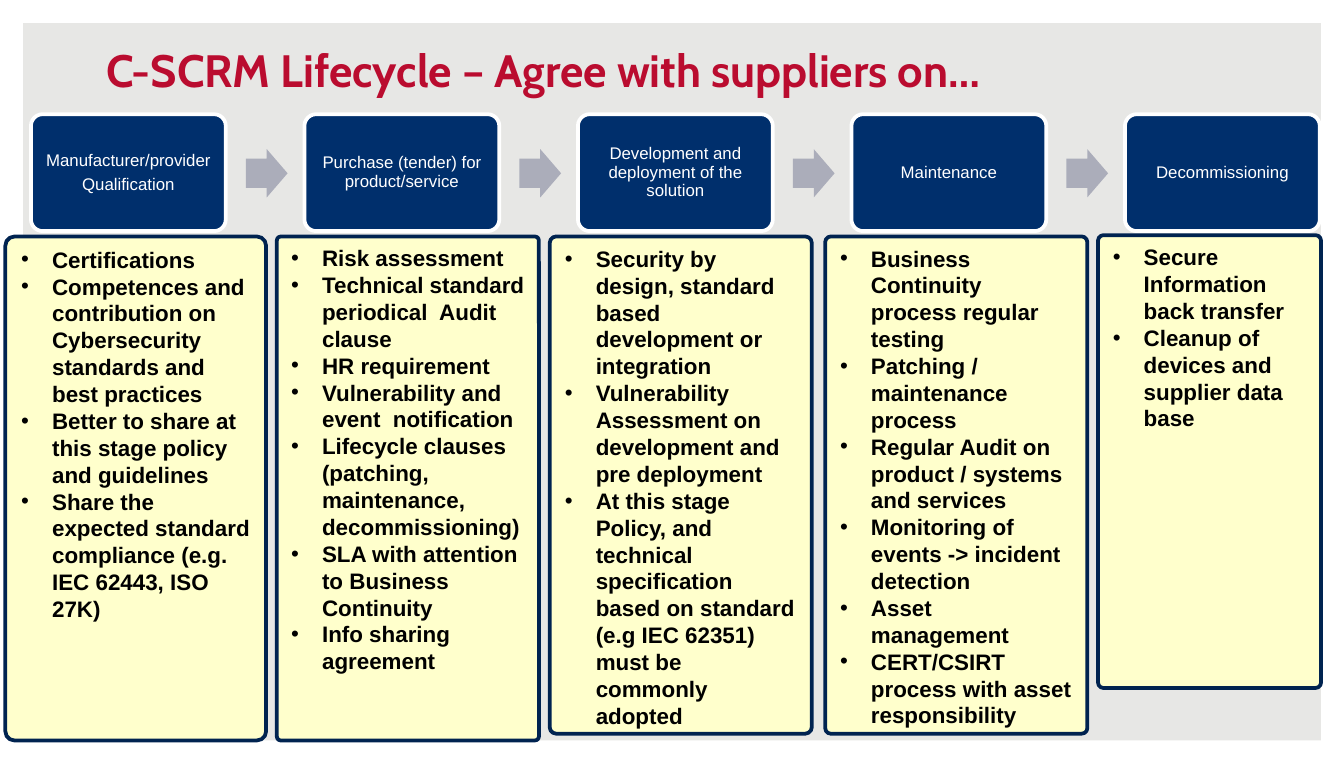
from pptx import Presentation
from pptx.dml.color import RGBColor
from pptx.enum.shapes import MSO_SHAPE
from pptx.enum.text import MSO_ANCHOR, MSO_AUTO_SIZE, PP_ALIGN
from pptx.oxml import parse_xml
from pptx.oxml.ns import nsdecls
from pptx.util import Inches, Pt

FRAME, ROUNDED, ARROW = MSO_SHAPE.FRAME, MSO_SHAPE.ROUNDED_RECTANGLE, MSO_SHAPE.RIGHT_ARROW
TOP, MIDDLE, BOTTOM = MSO_ANCHOR.TOP, MSO_ANCHOR.MIDDLE, MSO_ANCHOR.BOTTOM
LEFT, CENTER = PP_ALIGN.LEFT, PP_ALIGN.CENTER

THEME = {
    "title_font": "Cabin", "body_font": "Arial",
    "title_size": 24.3, "stage_size": 9, "card_size": 12,
    "back": "E7E7E5", "white": "FFFFFF", "title": "BA0C2F", "stage": "002F6C",
    "arrow": "ABADBA", "card": "FFFFCC", "card_line": "002350", "text": "000000",
}

TITLE = "C-SCRM Lifecycle – Agree with suppliers on…"
STAGES = [
    {"name": ["Manufacturer/provider", "Qualification"],
     "card": (0.04, 1.76, 1.94, 3.75), "round": 0.035,
     "points": ["Certifications",
                "Competences and contribution on Cybersecurity standards and best practices",
                "Better to share at this stage policy and guidelines",
                "Share the expected standard compliance (e.g. IEC 62443, ISO 27K)"]},
    {"name": ["Purchase (tender) for product/service"],
     "card": (2.06, 1.76, 1.95, 3.75), "round": 0.015,
     "points": ["Risk assessment",
                "Technical standard periodical  Audit clause",
                "HR requirement",
                "Vulnerability and event  notification",
                "Lifecycle clauses (patching, maintenance, decommissioning)",
                "SLA with attention to Business Continuity",
                "Info sharing agreement"]},
    {"name": ["Development and deployment of the solution"],
     "card": (4.09, 1.76, 1.95, 3.7), "round": 0.025,
     "points": ["Security by design, standard based  development or integration",
                "Vulnerability Assessment on development and pre deployment",
                "At this stage Policy, and technical specification based on standard "
                "(e.g IEC 62351) must be commonly adopted"]},
    {"name": ["Maintenance"],
     "card": (6.14, 1.76, 1.95, 3.7), "round": 0.021,
     "points": ["Business Continuity process regular testing",
                "Patching / maintenance process",
                "Regular Audit on product / systems and services",
                "Monitoring of events -> incident detection",
                "Asset management",
                "CERT/CSIRT process with asset responsibility"]},
    {"name": ["Decommissioning"],
     "card": (8.17, 1.75, 1.66, 3.37), "round": 0.025,
     "points": ["Secure Information back transfer",
                "Cleanup of devices and supplier data base"]},
]
STAGE_LEFT, STAGE_TOP, STAGE_W, STAGE_H = 0.23, 0.85, 1.45, 0.87
STAGE_STEP = 2.035
ARROW_OFFSET, ARROW_TOP, ARROW_W, ARROW_H = 1.6, 1.11, 0.31, 0.36
BULLET_INDENT = 0.23


def color(name):
    return RGBColor.from_string(THEME[name])


def add_block(s, kind, box, fill, adjust, line=None):
    sp = s.shapes.add_shape(kind, *[Inches(v) for v in box])
    sp.shadow.inherit = False
    sp.fill.solid()
    sp.fill.fore_color.rgb = color(fill)
    for i, value in enumerate(adjust):
        sp.adjustments[i] = value
    if line:
        sp.line.color.rgb = color(line)
        sp.line.width = Pt(2)
    else:
        sp.line.fill.background()
    return sp


def set_frame(tf, anchor, inset_x, inset_y):
    tf.word_wrap = True
    tf.auto_size = MSO_AUTO_SIZE.NONE
    tf.vertical_anchor = anchor
    tf.margin_left = tf.margin_right = Inches(inset_x)
    tf.margin_top = tf.margin_bottom = Inches(inset_y)


def write(tf, lines, align, font, size, ink, bold=False):
    for i, line in enumerate(lines):
        p = tf.paragraphs[0] if i == 0 else tf.add_paragraph()
        p.alignment = align
        r = p.add_run()
        r.text = line
        r.font.name = THEME[font]
        r.font.size = Pt(THEME[size])
        r.font.color.rgb = color(ink)
        r.font.bold = bold


def add_bullet(p):
    pPr = p._p.get_or_add_pPr()
    pPr.set("marL", str(Inches(BULLET_INDENT)))
    pPr.set("indent", str(-Inches(BULLET_INDENT)))
    for xml in (f'<a:buClr {nsdecls("a")}><a:srgbClr val="{THEME["text"]}"/></a:buClr>',
                f'<a:buFont {nsdecls("a")} typeface="Arial"/>',
                f'<a:buChar {nsdecls("a")} char="•"/>'):
        pPr.append(parse_xml(xml))


def add_title(s):
    sp = s.shapes.title
    sp.left, sp.top, sp.width, sp.height = [Inches(v) for v in (0.69, 0.32, 8.62, 0.5)]
    set_frame(sp.text_frame, BOTTOM, 0.1, 0.1)
    write(sp.text_frame, [TITLE], LEFT, "title_font", "title_size", "title", True)


def add_stage(s, left, name):
    sp = add_block(s, ROUNDED, (left, STAGE_TOP, STAGE_W, STAGE_H), "stage", [0.1], "white")
    tf = sp.text_frame
    set_frame(tf, MIDDLE, 0.04, 0.04)
    write(tf, name, CENTER, "body_font", "stage_size", "white")
    for p in tf.paragraphs:
        p.line_spacing = 0.9
        p.space_after = Pt(0.35 * THEME["stage_size"])


def add_card(s, stage):
    sp = add_block(s, ROUNDED, stage["card"], "card", [stage["round"]], "card_line")
    tf = sp.text_frame
    set_frame(tf, TOP, 0.1, 0.05)
    write(tf, stage["points"], LEFT, "body_font", "card_size", "text", True)
    for p in tf.paragraphs:
        add_bullet(p)


def main():
    prs = Presentation()
    prs.slide_width, prs.slide_height = Inches(10), Inches(5.67)
    s = prs.slides.add_slide(prs.slide_layouts[5])
    s.background.fill.solid()
    s.background.fill.fore_color.rgb = color("back")
    add_block(s, FRAME, (0, 0, 10, 5.68), "white", [0.03])
    add_title(s)
    for i, stage in enumerate(STAGES):
        left = STAGE_LEFT + i * STAGE_STEP
        add_stage(s, left, stage["name"])
        if i < len(STAGES) - 1:
            add_block(s, ARROW, (left + ARROW_OFFSET, ARROW_TOP, ARROW_W, ARROW_H),
                      "arrow", [0.6, 0.5])
    for stage in STAGES:
        add_card(s, stage)
    prs.save("out.pptx")


if __name__ == "__main__":
    main()
